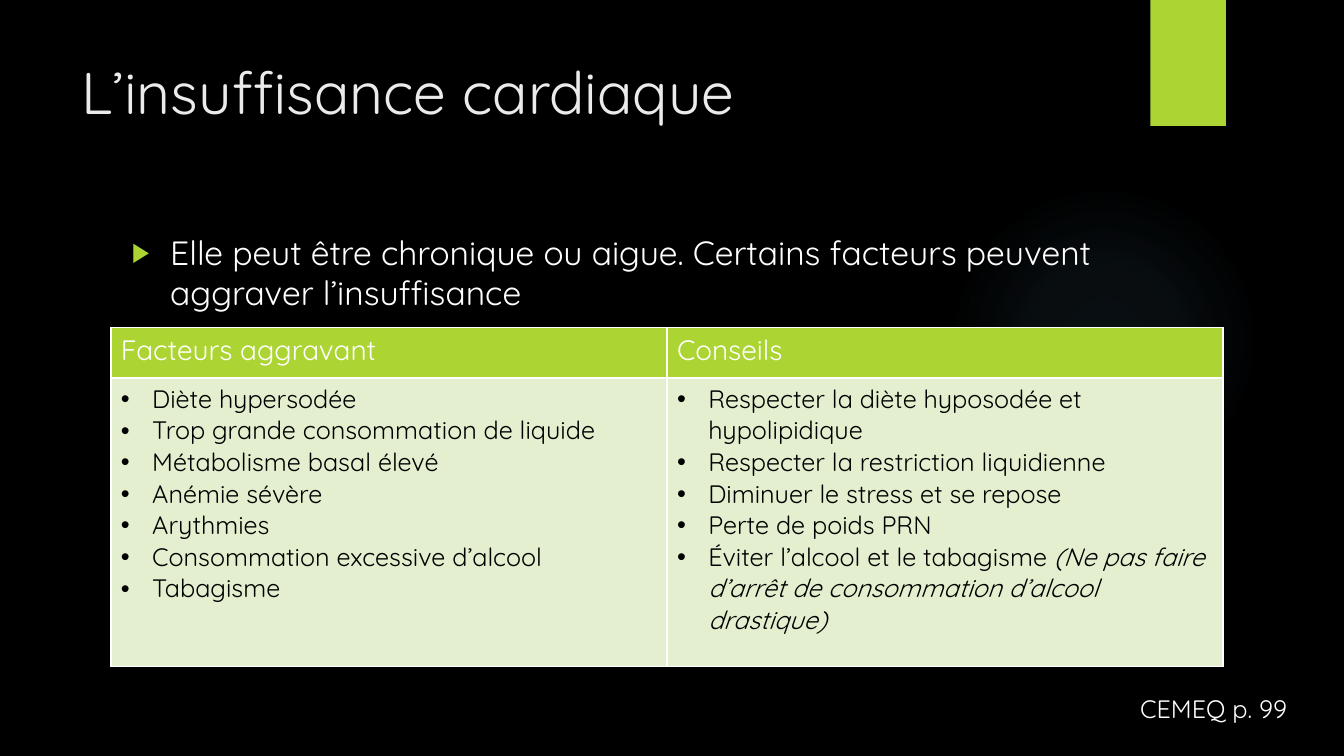
from dataclasses import dataclass

from lxml.etree import SubElement
from pptx import Presentation
from pptx.dml.color import RGBColor
from pptx.enum.shapes import MSO_SHAPE
from pptx.enum.text import MSO_ANCHOR, MSO_AUTO_SIZE, PP_ALIGN
from pptx.oxml import parse_xml
from pptx.oxml.ns import nsdecls, qn
from pptx.util import Inches, Pt


@dataclass(frozen=True)
class Theme:
    font: str = "Quicksand"
    background: str = "000000"
    accent: str = "ACD433"
    pale: str = "E3EFCE"
    glow: str = "7AC4F0"
    title_color: str = "EBEBEB"
    light: str = "FFFFFF"
    dark: str = "000000"
    title_size: int = 42
    body_size: int = 24
    header_size: int = 20
    text_size: int = 18


THEME = Theme()

FACTORS = [
    "Diète hypersodée",
    "Trop grande consommation de liquide",
    "Métabolisme basal élevé",
    "Anémie sévère",
    "Arythmies",
    "Consommation excessive d’alcool",
    "Tabagisme",
]
ADVICE = [
    "Respecter la diète hyposodée et hypolipidique",
    "Respecter la restriction liquidienne",
    "Diminuer le stress et se repose",
    "Perte de poids PRN",
    "Éviter l’alcool et le tabagisme ",
]
ADVICE_NOTE = "(Ne pas faire d’arrêt de consommation d’alcool drastique)"


def write(para, text, size=THEME.text_size, color=THEME.light, italic=False):
    span = para.add_run()
    span.text = text
    span.font.name = THEME.font
    span.font.size = Pt(size)
    span.font.italic = italic
    span.font.color.rgb = RGBColor.from_string(color)


def set_bullet(para, mark, indent, color=None, percent=100):
    properties = para._p.get_or_add_pPr()
    properties.set("marL", str(Inches(indent)))
    properties.set("indent", str(-Inches(indent)))
    if color:
        holder = SubElement(properties, qn("a:buClr"))
        SubElement(holder, qn("a:srgbClr"), val=color)
    SubElement(properties, qn("a:buSzPct"), val=str(percent * 1000))
    SubElement(properties, qn("a:buFont"), typeface="Arial")
    SubElement(properties, qn("a:buChar"), char=mark)


def add_shape(page, kind, left, top, width, height):
    shape = page.shapes.add_shape(
        kind, Inches(left), Inches(top), Inches(width), Inches(height))
    shape.shadow.inherit = False
    shape.line.fill.background()
    return shape


def add_glow(page):
    """Add a disc that fades from a faint blue centre to nothing."""
    disc = add_shape(page, MSO_SHAPE.OVAL, 9.41, 1.83, 3.08, 3.08)
    stops = "".join(
        f'<a:gs pos="{place * 1000}"><a:srgbClr val="{THEME.glow}">'
        f'<a:alpha val="{alpha * 1000}"/></a:srgbClr></a:gs>'
        for place, alpha in ((0, 7), (36, 6), (69, 0)))
    gradient = parse_xml(
        f'<a:gradFill {nsdecls("a")}><a:gsLst>{stops}</a:gsLst><a:path path="circle">'
        '<a:fillToRect l="50000" t="50000" r="50000" b="50000"/></a:path></a:gradFill>')
    disc._element.spPr.find(qn("a:prstGeom")).addnext(gradient)


def add_tab(page):
    tab = add_shape(page, MSO_SHAPE.RECTANGLE, 11.41, 0, 0.75, 1.25)
    tab.fill.solid()
    tab.fill.fore_color.rgb = RGBColor.from_string(THEME.accent)


def add_title(page, text):
    title = page.shapes.title
    title.left, title.top = Inches(0.71), Inches(0.5)
    title.width, title.height = Inches(10.29), Inches(1.53)
    frame = title.text_frame
    frame.word_wrap = True
    frame.auto_size = MSO_AUTO_SIZE.NONE
    frame.vertical_anchor = MSO_ANCHOR.TOP
    para = frame.paragraphs[0]
    para.alignment = PP_ALIGN.LEFT
    write(para, text, size=THEME.title_size, color=THEME.title_color)


def add_text(page, text, left, top, width, height, size, bulleted=False):
    box = page.shapes.add_textbox(
        Inches(left), Inches(top), Inches(width), Inches(height))
    box.text_frame.word_wrap = True
    para = box.text_frame.paragraphs[0]
    if bulleted:
        set_bullet(para, "▶", 0.38, color=THEME.accent, percent=80)
    write(para, text, size=size)


def style_cell(cell, fill):
    properties = cell._tc.get_or_add_tcPr()
    for side in ("lnL", "lnR", "lnT", "lnB"):
        properties.append(parse_xml(
            f'<a:{side} {nsdecls("a")} w="{Pt(1)}"><a:solidFill>'
            f'<a:srgbClr val="{THEME.light}"/></a:solidFill></a:{side}>'))
    cell.fill.solid()
    cell.fill.fore_color.rgb = RGBColor.from_string(fill)


def write_list(cell, items):
    frame = cell.text_frame
    for index, item in enumerate(items):
        para = frame.add_paragraph() if index else frame.paragraphs[0]
        set_bullet(para, "•", 0.31)
        write(para, item, color=THEME.dark)


def add_advice_table(page):
    table = page.shapes.add_table(
        2, 2, Inches(1.1), Inches(3.25), Inches(11.03), Inches(3.36)).table
    table.rows[0].height, table.rows[1].height = Inches(0.5), Inches(2.86)
    columns = (("Facteurs aggravant", FACTORS), ("Conseils", ADVICE))
    for index, (heading, items) in enumerate(columns):
        header, body = table.cell(0, index), table.cell(1, index)
        style_cell(header, THEME.accent)
        style_cell(body, THEME.pale)
        write(header.text_frame.paragraphs[0], heading, size=THEME.header_size)
        write_list(body, items)
    last = table.cell(1, 1).text_frame.paragraphs[-1]
    write(last, ADVICE_NOTE, color=THEME.dark, italic=True)


def main():
    deck = Presentation()
    deck.slide_width, deck.slide_height = Inches(13.33), Inches(7.5)
    page = deck.slides.add_slide(deck.slide_layouts[5])
    page.background.fill.solid()
    page.background.fill.fore_color.rgb = RGBColor.from_string(THEME.background)
    add_glow(page)
    add_tab(page)
    add_title(page, "L’insuffisance cardiaque")
    add_text(page, "Elle peut être chronique ou aigue. Certains facteurs peuvent "
             "aggraver l’insuffisance", 1.21, 2.25, 9.78, 0.95,
             size=THEME.body_size, bulleted=True)
    add_text(page, "CEMEQ p. 99", 11.21, 6.83, 1.85, 0.4, size=THEME.text_size)
    add_advice_table(page)
    deck.save("out.pptx")


if __name__ == "__main__":
    main()
